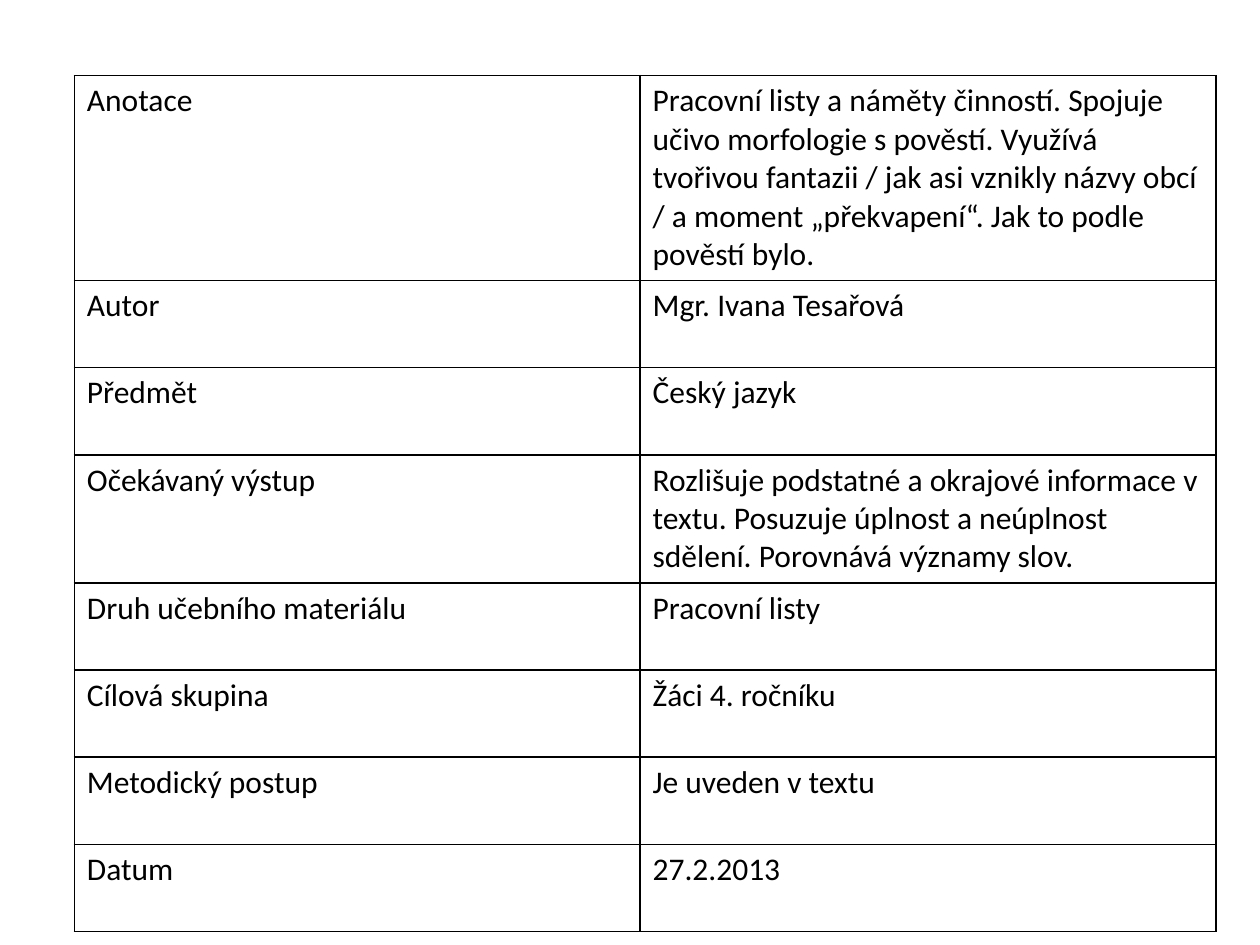
from dataclasses import dataclass

from lxml.etree import SubElement
from pptx import Presentation
from pptx.dml.color import RGBColor as Rgb
from pptx.oxml.ns import qn
from pptx.util import Inches, Pt


@dataclass(frozen=True)
class Theme:
    """Colours, font and sizes."""
    ink: str = "000000"
    font: str = "Calibri"
    size: int = 18
    line: int = 1


THEME = Theme()
COLS = (4.49, 4.57)
LOW = 0.69
ROWS = (
    (1.6, "Anotace",
     "Pracovní listy a náměty činností. Spojuje učivo morfologie s pověstí. "
     "Využívá tvořivou fantazii / jak asi vznikly názvy obcí / a moment "
     "„překvapení“. Jak to podle pověstí bylo."),
    (LOW, "Autor", "Mgr. Ivana Tesařová"),
    (LOW, "Předmět", "Český jazyk"),
    (0.97, "Očekávaný výstup",
     "Rozlišuje podstatné a okrajové informace v textu. Posuzuje úplnost "
     "a neúplnost sdělení. Porovnává významy slov."),
    (LOW, "Druh učebního materiálu", "Pracovní listy"),
    (LOW, "Cílová skupina", "Žáci 4. ročníku"),
    (LOW, "Metodický postup", "Je uveden v textu"),
    (LOW, "Datum", "27.2.2013"),
)


def border(cell):
    """Draw a thin line on all four sides of a cell."""
    props = cell._tc.get_or_add_tcPr()
    for place, side in enumerate(("lnL", "lnR", "lnT", "lnB")):
        line = props.makeelement(qn(f"a:{side}"), {"w": str(Pt(THEME.line))})
        fill = SubElement(line, qn("a:solidFill"))
        SubElement(fill, qn("a:srgbClr"), val=THEME.ink)
        props.insert(place, line)


def write(cell, text):
    """Fill one cell with plain text and frame it."""
    cell.text = text
    cell.fill.background()
    font = cell.text_frame.paragraphs[0].font
    font.name, font.size, font.bold = THEME.font, Pt(THEME.size), False
    font.color.rgb = Rgb.from_string(THEME.ink)
    border(cell)


def facts(slide, left, top, width, height):
    """Place the table of facts in the given box."""
    table = slide.shapes.add_table(
        len(ROWS), len(COLS), left, top, width, height).table
    table.first_row = table.horz_banding = False
    for col, share in zip(table.columns, COLS):
        col.width = int(width * share / sum(COLS))
    total = sum(row[0] for row in ROWS)
    for r, (tall, *texts) in enumerate(ROWS):
        table.rows[r].height = int(height * tall / total)
        for c, text in enumerate(texts):
            write(table.cell(r, c), text)


def main():
    """Build and save the slide."""
    deck = Presentation()
    deck.slide_width, deck.slide_height = Inches(10), Inches(7.5)
    slide = deck.slides.add_slide(deck.slide_layouts[6])
    facts(slide, Inches(0.59), Inches(0.6), Inches(9.06), Inches(6.73))
    deck.save("out.pptx")


if __name__ == "__main__":
    main()
